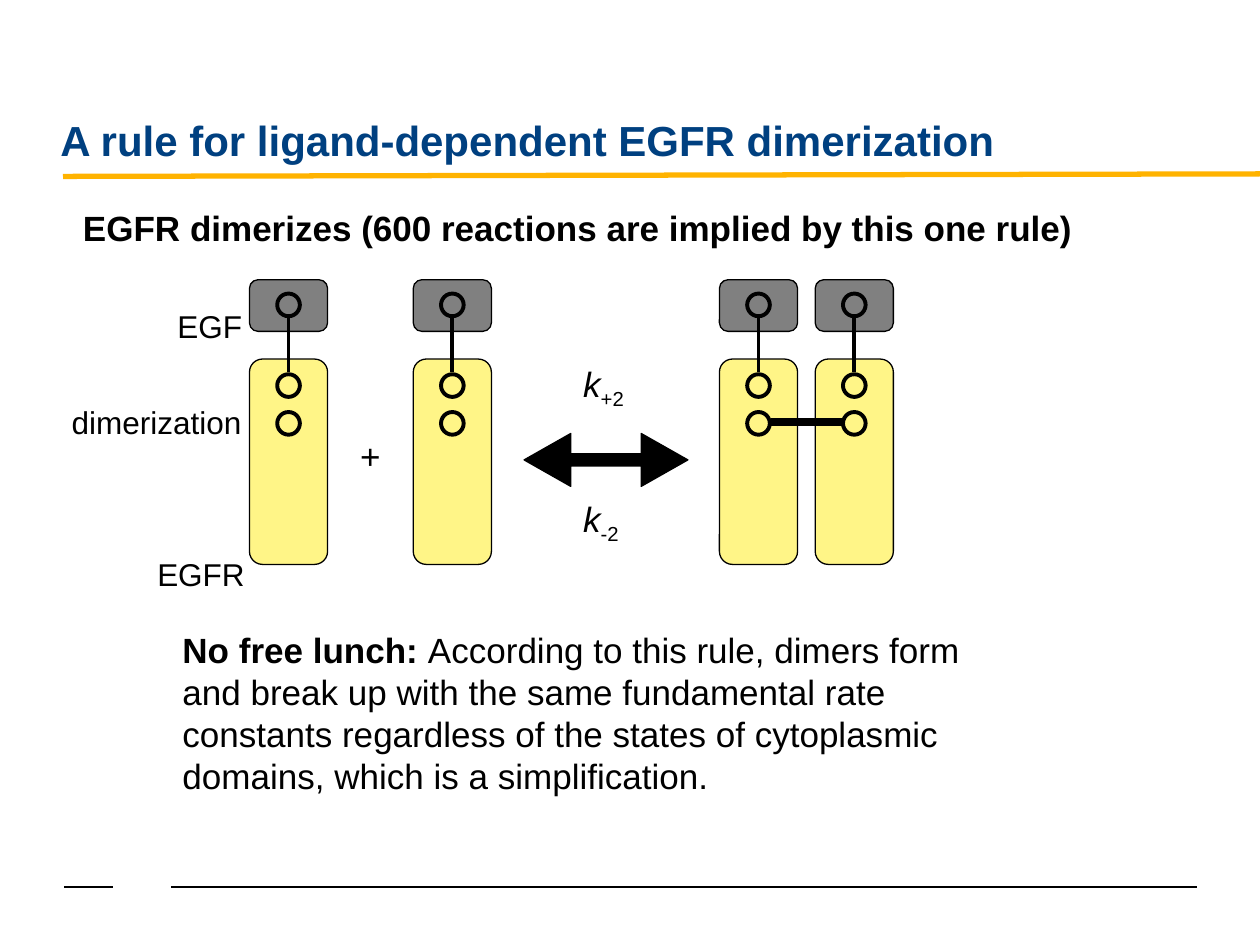
import pptx
import pptx.dml.color
import pptx.enum.shapes
import pptx.enum.text
import pptx.oxml
import pptx.oxml.ns
import pptx.util
from pptx.util import Inches

SHAPES = pptx.enum.shapes.MSO_SHAPE
ANCHORS = pptx.enum.text.MSO_ANCHOR


def color(hex_string):
    return pptx.dml.color.RGBColor.from_string(hex_string)


class RuleSlide:
    FONT = "Arial"
    BLACK, NAVY, GOLD = "000000", "004080", "FFB300"
    LIGAND, RECEPTOR = "808080", "FFF587"
    THIN, MEDIUM, THICK = 0.75, 2.25, 4.5

    def __init__(self, presentation):
        self.slide = presentation.slides.add_slide(presentation.slide_layouts[6])

    def line(self, x1, y1, x2, y2, width, ink=BLACK):
        connector = self.slide.shapes.add_connector(
            pptx.enum.shapes.MSO_CONNECTOR.STRAIGHT,
            Inches(x1), Inches(y1), Inches(x2), Inches(y2))
        connector.line.color.rgb = color(ink)
        connector.line.width = pptx.util.Pt(width)
        properties = connector._element.spPr
        properties.append(pptx.oxml.parse_xml(
            f"<a:effectLst {pptx.oxml.ns.nsdecls('a')}/>"))

    def shape(self, kind, x, y, width, height, fill=None, outline=THIN, adjustments=()):
        shape = self.slide.shapes.add_shape(
            kind, Inches(x), Inches(y), Inches(width), Inches(height))
        shape.shadow.inherit = False
        if fill:
            shape.fill.solid()
            shape.fill.fore_color.rgb = color(fill)
        else:
            shape.fill.background()
        shape.line.color.rgb = color(self.BLACK)
        shape.line.width = pptx.util.Pt(outline)
        for index, value in enumerate(adjustments):
            shape.adjustments[index] = value

    def text(self, x, y, width, height, runs, size, ink=BLACK, wrap=False,
             anchor=ANCHORS.TOP):
        """Each run is (text, style); style is "", "bold", "italic" or "subscript"."""
        box = self.slide.shapes.add_textbox(
            Inches(x), Inches(y), Inches(width), Inches(height))
        frame = box.text_frame
        frame.word_wrap = wrap
        frame.vertical_anchor = anchor
        for words, style in runs:
            run = frame.paragraphs[0].add_run()
            run.text = words
            run.font.name = self.FONT
            run.font.size = pptx.util.Pt(size)
            run.font.color.rgb = color(ink)
            run.font.bold = style == "bold"
            run.font.italic = style == "italic"
            if style == "subscript":
                run._r.get_or_add_rPr().set("baseline", "-25000")

    def site(self, center, y):
        self.shape(SHAPES.OVAL, center - 0.09, y, 0.18, 0.18, outline=self.MEDIUM)

    def bound_receptor(self, x):
        """Draw a receptor with its ligand attached."""
        center = x + 0.31
        self.shape(SHAPES.ROUNDED_RECTANGLE, x, 2.85, 0.62, 1.63, self.RECEPTOR)
        self.shape(SHAPES.ROUNDED_RECTANGLE, x, 2.22, 0.62, 0.41, self.LIGAND)
        for y in (2.33, 2.97, 3.27):
            self.site(center, y)
        self.line(center, 2.51, center, 2.95, self.MEDIUM)


def main():
    presentation = pptx.Presentation()
    presentation.slide_width = Inches(10)
    presentation.slide_height = Inches(7.5)
    rule = RuleSlide(presentation)

    # Footer rules and title
    rule.line(1.36, 7.04, 9.5, 7.04, rule.THIN)
    rule.line(0.51, 7.04, 0.9, 7.04, rule.THIN)
    rule.line(0.5, 1.4, 10, 1.38, 3, rule.GOLD)
    rule.text(0.38, 0.44, 9.12, 0.92,
              [("A rule for ligand-dependent EGFR dimerization", "bold")],
              24, rule.NAVY, wrap=True, anchor=ANCHORS.BOTTOM)
    rule.text(0.56, 1.59, 8.12, 0.44,
              [("EGFR dimerizes (600 reactions are implied by this one rule)", "bold")], 20)

    # Two monomers, then the dimer
    for x in (1.98, 3.28, 5.71, 6.47):
        rule.bound_receptor(x)
    rule.line(6.12, 3.35, 6.68, 3.35, rule.THICK)

    # Reaction signs and rate constants
    rule.text(2.76, 3.4, 0.37, 0.44, [("+", "")], 20)
    rule.shape(SHAPES.LEFT_RIGHT_ARROW, 4.16, 3.44, 1.3, 0.42, rule.BLACK,
               adjustments=(0.229, 0.882))
    for y, width, index in ((2.83, 0.58, "+2"), (3.9, 0.53, "-2")):
        rule.text(4.53, y, width, 0.44, [("k", "italic"), (index, "subscript")], 20)

    # Part labels
    for x, y, width, label in ((1.31, 2.39, 0.72, "EGF"),
                               (0.47, 3.15, 1.55, "dimerization"),
                               (1.15, 4.36, 0.9, "EGFR")):
        rule.text(x, y, width, 0.4, [(label, "")], 18)

    # Caveat
    rule.text(1.35, 4.94, 6.66, 1.45, [
        ("No free lunch: ", "bold"),
        ("According to this rule, dimers form and break up with the same "
         "fundamental rate constants regardless of the states of cytoplasmic "
         "domains, which is a simplification.", "")], 20, wrap=True)

    presentation.save("out.pptx")


if __name__ == "__main__":
    main()
